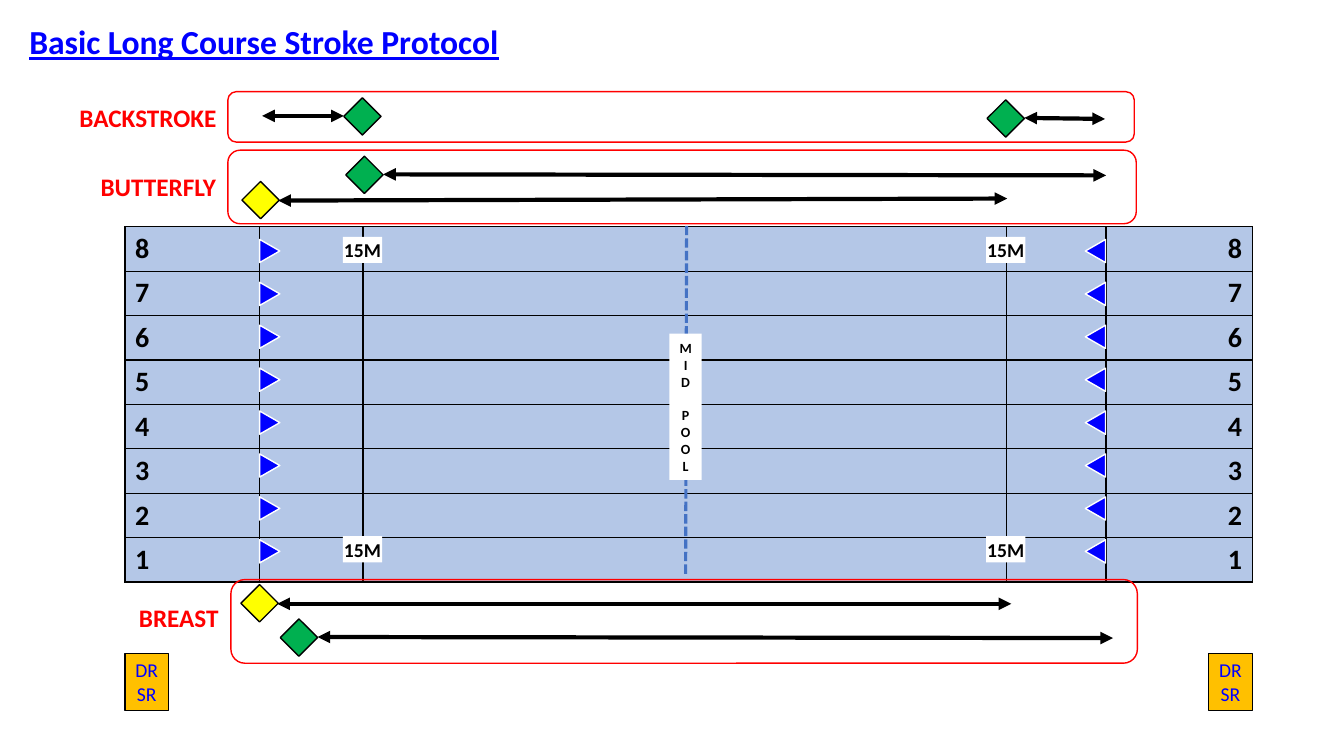
"""Build the long course stroke protocol slide: pool lanes and judge positions."""
from lxml import etree
from pptx import Presentation
from pptx.dml.color import RGBColor
from pptx.enum.dml import MSO_LINE
from pptx.enum.shapes import MSO_CONNECTOR, MSO_SHAPE
from pptx.enum.text import MSO_ANCHOR, MSO_AUTO_SIZE, PP_ALIGN
from pptx.oxml.ns import qn
from pptx.util import Inches, Pt

RECT, ROUNDED = MSO_SHAPE.RECTANGLE, MSO_SHAPE.ROUNDED_RECTANGLE
DIAMOND, TRIANGLE = MSO_SHAPE.DIAMOND, MSO_SHAPE.ISOSCELES_TRIANGLE
STRAIGHT, DASH = MSO_CONNECTOR.STRAIGHT, MSO_LINE.SQUARE_DOT
LEFT, CENTER, RIGHT = PP_ALIGN.LEFT, PP_ALIGN.CENTER, PP_ALIGN.RIGHT
MIDDLE, NO_AUTOFIT = MSO_ANCHOR.MIDDLE, MSO_AUTO_SIZE.NONE
BLACK, WHITE, BLUE, RED = "000000", "FFFFFF", "0000FF", "FF0000"
GREEN, YELLOW, ORANGE, WATER, MID_BLUE = "00B050", "FFFF00", "FFC000", "B4C7E7", "4472C4"
rgb = RGBColor.from_string


def set_text(tf, lines, size, color, align=CENTER, bold=True):
    for i, line in enumerate(lines):
        p = tf.paragraphs[0] if i == 0 else tf.add_paragraph()
        p.text = line
        p.alignment = align
        p.font.name = "Calibri"
        p.font.size = Pt(size)
        p.font.bold = bold
        p.font.color.rgb = rgb(color)


def add_shape(kind, box, fill=None, line=None, width=1):
    sp = s.shapes.add_shape(kind, *map(Inches, box))
    sp.shadow.inherit = False
    if fill:
        sp.fill.solid()
        sp.fill.fore_color.rgb = rgb(fill)
    else:
        sp.fill.background()
    if line:
        sp.line.color.rgb = rgb(line)
        sp.line.width = Pt(width)
    else:
        sp.line.fill.background()
    sp.text_frame.word_wrap = False
    sp.text_frame.vertical_anchor = MIDDLE
    return sp


prs = Presentation()
prs.slide_width, prs.slide_height = Inches(13.33), Inches(7.5)
s = prs.slides.add_slide(prs.slide_layouts[5])

title = s.shapes.title
title.left, title.top, title.width, title.height = map(Inches, (0.19, 0.16, 4.91, 0.5))
tf = title.text_frame
tf.word_wrap = False
tf.auto_size = NO_AUTOFIT
set_text(tf, ["Basic Long Course Stroke Protocol"], 24, BLUE, LEFT)
tf.paragraphs[0].font.underline = True

lanes = 8
frame = s.shapes.add_table(lanes, 5, *map(Inches, (1.24, 2.25, 11.18, 3.47)))
table = frame.table
table.first_row = table.horz_banding = False
for column, width in zip(table.columns, (1.33, 1.03, 6.38, 0.99, 1.45)):
    column.width = Inches(width)
for row in range(lanes):
    for col in range(5):
        cell = table.cell(row, col)
        cell.vertical_anchor = MIDDLE
        for side in ("a:lnL", "a:lnR", "a:lnT", "a:lnB"):
            ln = etree.SubElement(cell._tc.get_or_add_tcPr(), qn(side), w=str(Pt(1)))
            fill = etree.SubElement(ln, qn("a:solidFill"))
            etree.SubElement(fill, qn("a:srgbClr"), val=BLACK)
        cell.fill.solid()
        cell.fill.fore_color.rgb = rgb(WATER)
    for col, align in ((0, LEFT), (4, RIGHT)):
        set_text(table.cell(row, col).text_frame, [str(lanes - row)], 20, BLACK, align)

for x, angle in ((2.56, 90), (10.75, 270)):
    for lane in range(lanes):
        y = 2.39 + 2.98 * lane / (lanes - 1)
        add_shape(TRIANGLE, (x, y, 0.23, 0.2), BLUE, WHITE).rotation = angle

for x in (3.4, 9.78):
    for y in (2.35, 5.32):
        tf = add_shape(RECT, (x, y, 0.39, 0.26), WHITE).text_frame
        tf.margin_left = tf.margin_right = tf.margin_top = tf.margin_bottom = Inches(0.01)
        set_text(tf, ["15M"], 14, BLACK)

for x in (1.24, 11.99):
    sp = add_shape(RECT, (x, 6.48, 0.43, 0.57), ORANGE, BLACK, 0.75)
    set_text(sp.text_frame, ["DR", "SR"], 14, BLUE, bold=False)

for x, y, color in ((2.39, 5.8, YELLOW), (2.78, 6.14, GREEN), (2.4, 1.8, YELLOW),
                    (3.43, 1.55, GREEN), (3.41, 0.97, GREEN), (9.79, 0.99, GREEN)):
    add_shape(DIAMOND, (x, y, 0.37, 0.37), color, BLACK)

mid_line = (6.81, 2.24, 6.8, 5.72)
walks = [(10.16, 1.17, 10.96, 1.18), (2.6, 1.15, 3.41, 1.15), (3.8, 1.73, 10.97, 1.74),
         (2.76, 1.99, 9.99, 1.97), (3.15, 6.32, 11.04, 6.33), (2.75, 5.99, 10.03, 5.99)]
for ends in [mid_line] + walks:
    cxn = s.shapes.add_connector(STRAIGHT, *map(Inches, ends))
    if ends == mid_line:
        cxn.line.color.rgb = rgb(MID_BLUE)
        cxn.line.width = Pt(2.25)
        cxn.line.dash_style = DASH
    else:
        cxn.line.color.rgb = rgb(BLACK)
        cxn.line.width = Pt(3)
        for end in ("a:headEnd", "a:tailEnd"):
            etree.SubElement(cxn.line._get_or_add_ln(), qn(end), type="triangle")
    etree.SubElement(cxn._element.spPr, qn("a:effectLst"))

tf = add_shape(RECT, (6.64, 3.31, 0.32, 1.45), WHITE).text_frame
set_text(tf, "MIDPOOL", 10, BLACK)
tf.paragraphs[3].space_before = Pt(12)

for label, label_box, stroke_box in (
        ("BACKSTROKE", (0.69, 0.97, 1.57, 0.4), (2.26, 0.91, 8.99, 0.5)),
        ("BUTTERFLY", (0.9, 1.65, 1.36, 0.4), (2.26, 1.49, 9.01, 0.73)),
        ("BREAST", (1.28, 5.93, 1, 0.4), (2.29, 5.75, 8.99, 0.83))):
    add_shape(ROUNDED, stroke_box, line=RED)
    tf = s.shapes.add_textbox(*map(Inches, label_box)).text_frame
    tf.word_wrap = False
    set_text(tf, [label], 18, RED, LEFT)

prs.save("out.pptx")
